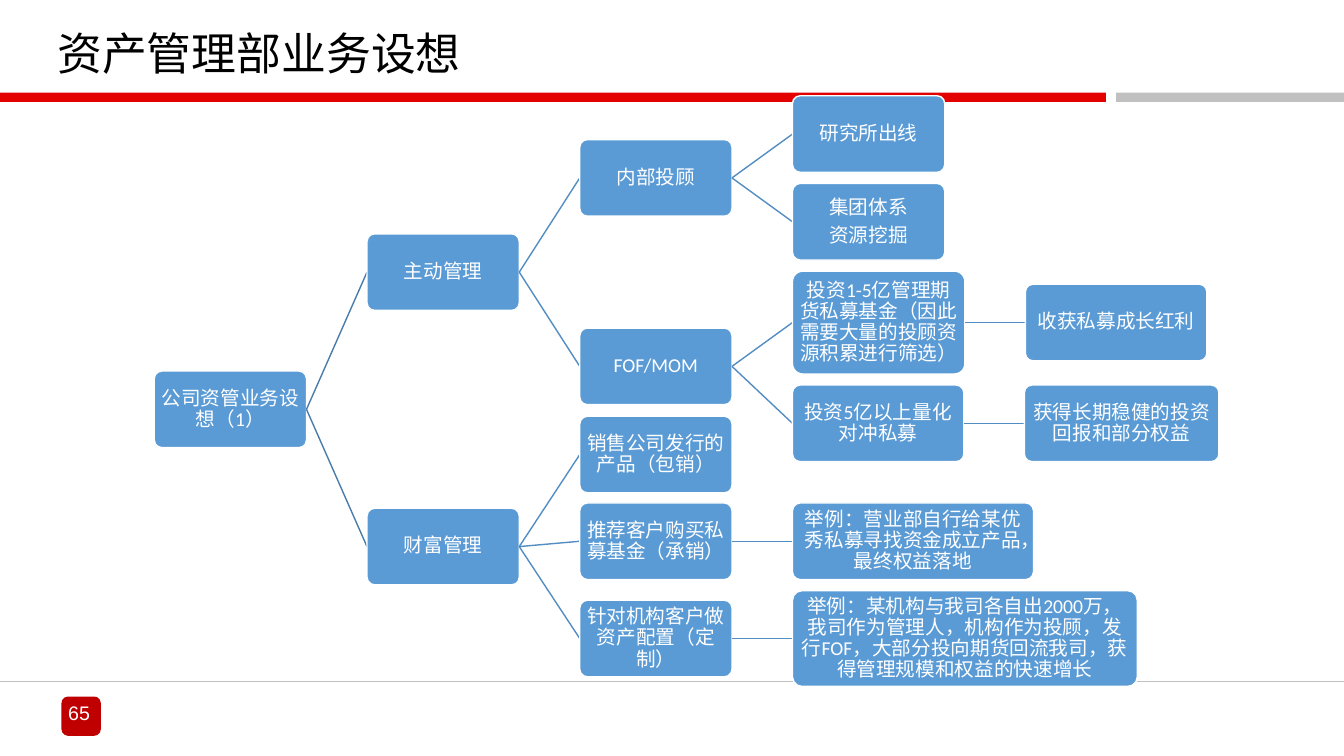
from dataclasses import dataclass, field
from typing import List

from lxml.etree import SubElement
from pptx import Presentation
from pptx.dml.color import RGBColor
from pptx.enum.lang import MSO_LANGUAGE_ID
from pptx.enum.shapes import MSO_CONNECTOR, MSO_SHAPE
from pptx.enum.text import MSO_ANCHOR, PP_ALIGN
from pptx.oxml.ns import qn
from pptx.util import Inches, Pt

WHITE, GREY, BOX_BLUE = "FFFFFF", "C0C0C0", "5B9BD5"
ROOT_LINK, BRANCH_LINK = "497CAB", "538DC1"
CJK_FONT = "Noto Sans CJK SC"
TREE_LEFT, COLUMN_GAP = 1.53, 0.6


@dataclass
class Node:
    """A box of the tree; only leaves state their top."""
    text: str
    children: List["Node"] = field(default_factory=list)
    leaf_top: float = 0
    width: float = 1.51
    height: float = 0.76

    @property
    def middle(self) -> float:
        if not self.children:
            return self.leaf_top + self.height / 2
        first, last = self.children[0], self.children[-1]
        return (first.top + last.top + last.height) / 2

    @property
    def top(self) -> float:
        return self.middle - self.height / 2


def color(hex_value: str) -> RGBColor:
    return RGBColor.from_string(hex_value)


def add_block(slide, preset, left: float, top: float, width: float, height: float, fill: str):
    block = slide.shapes.add_shape(
        preset, Inches(left), Inches(top), Inches(width), Inches(height))
    block.shadow.inherit = False
    block.fill.solid()
    block.fill.fore_color.rgb = color(fill)
    block.line.fill.background()
    return block


def add_link(slide, x1: float, y1: float, x2: float, y2: float, stroke: str) -> None:
    link = slide.shapes.add_connector(
        MSO_CONNECTOR.STRAIGHT, Inches(x1), Inches(y1), Inches(x2), Inches(y2))
    link.line.color.rgb = color(stroke)
    link.line.width = Pt(1)
    SubElement(link._element.spPr, qn("a:effectLst"))


def write(shape, text: str, size: float, font: str, hex_value: str,
          align=PP_ALIGN.CENTER, anchor=MSO_ANCHOR.MIDDLE, line_spacing: float = 0.9) -> None:
    frame = shape.text_frame
    frame.text = text
    frame.word_wrap = True
    frame.vertical_anchor = anchor
    for paragraph in frame.paragraphs:
        paragraph.alignment = align
        paragraph.line_spacing = line_spacing
        for run in paragraph.runs:
            run.font.size = Pt(size)
            run.font.name = font
            run.font.color.rgb = color(hex_value)
            run.font.language_id = MSO_LANGUAGE_ID.SIMPLIFIED_CHINESE
            SubElement(run.font._element, qn("a:ea")).set("typeface", CJK_FONT)


def add_label(slide, left: float, top: float, width: float, height: float):
    return slide.shapes.add_textbox(Inches(left), Inches(top), Inches(width), Inches(height))


def draw_tree(slide, node: Node, left: float, link_color: str) -> None:
    box = add_block(slide, MSO_SHAPE.ROUNDED_RECTANGLE,
                    left, node.top, node.width, node.height, BOX_BLUE)
    box.adjustments[0] = 0.1
    box.line.color.rgb = color(WHITE)
    box.line.width = Pt(1)
    frame = box.text_frame
    frame.margin_left = frame.margin_right = Inches(0.03)
    frame.margin_top = frame.margin_bottom = Inches(0.03)
    write(box, node.text, 14, "Calibri", WHITE)
    for paragraph in frame.paragraphs:
        paragraph.space_after = Pt(4.9)

    right = left + node.width
    child_left = right + COLUMN_GAP
    for child in node.children:
        add_link(slide, right, node.middle, child_left, child.middle, link_color)
        draw_tree(slide, child, child_left, BRANCH_LINK)


# Content of the tree
in_house_advisers = Node("内部投顾", [
    Node("研究所出线", leaf_top=0.95),
    Node("集团体系\n资源挖掘", leaf_top=1.82),
])
fund_of_funds = Node("FOF/MOM", [
    Node("投资1-5亿管理期货私募基金（因此需要大量的投顾资源积累进行筛选）",
         [Node("收获私募成长红利", leaf_top=2.82, width=1.8)], width=1.71, height=1.02),
    Node("投资5亿以上量化对冲私募",
         [Node("获得长期稳健的投资回报和部分权益", leaf_top=3.82, width=1.93)], width=1.7),
])
wealth_management = Node("财富管理", [
    Node("销售公司发行的产品（包销）", leaf_top=4.13),
    Node("推荐客户购买私募基金（承销）", [
        Node("举例：营业部自行给某优秀私募寻找资金成立产品，最终权益落地",
             leaf_top=4.99, width=2.39)]),
    Node("针对机构客户做资产配置（定制）", [
        Node("举例：某机构与我司各自出2000万，我司作为管理人，机构作为投顾，"
             "发行FOF，大部分投向期货回流我司，获得管理规模和权益的快速增长",
             leaf_top=5.86, width=3.42, height=0.95)]),
])
business_plan = Node("公司资管业务设想（1）", [
    Node("主动管理", [in_house_advisers, fund_of_funds]),
    wealth_management,
])


def main() -> None:
    deck = Presentation()
    deck.slide_width, deck.slide_height = Inches(13.33), Inches(7.5)
    slide = deck.slides.add_slide(deck.slide_layouts[6])

    # Header bars, footer rule and page number
    add_block(slide, MSO_SHAPE.ROUNDED_RECTANGLE, 0.61, 6.91, 0.39, 0.39, "C00000")
    add_block(slide, MSO_SHAPE.RECTANGLE, 0, 0.92, 10.97, 0.09, "E20000")
    add_block(slide, MSO_SHAPE.RECTANGLE, 11.07, 0.92, 2.26, 0.09, GREY)
    add_link(slide, 0, 6.76, 13.33, 6.76, GREY)
    page_number = add_label(slide, 0.31, 6.89, 0.95, 0.37)
    write(page_number, "65", 14, "Arial", WHITE, line_spacing=1.0)

    # Title
    title = add_label(slide, 0.47, 0.12, 11, 0.72)
    write(title, "资产管理部业务设想", 32, "Times New Roman", "000000",
          PP_ALIGN.LEFT, MSO_ANCHOR.BOTTOM)

    # Business tree
    draw_tree(slide, business_plan, TREE_LEFT, ROOT_LINK)
    deck.save("out.pptx")


if __name__ == "__main__":
    main()
